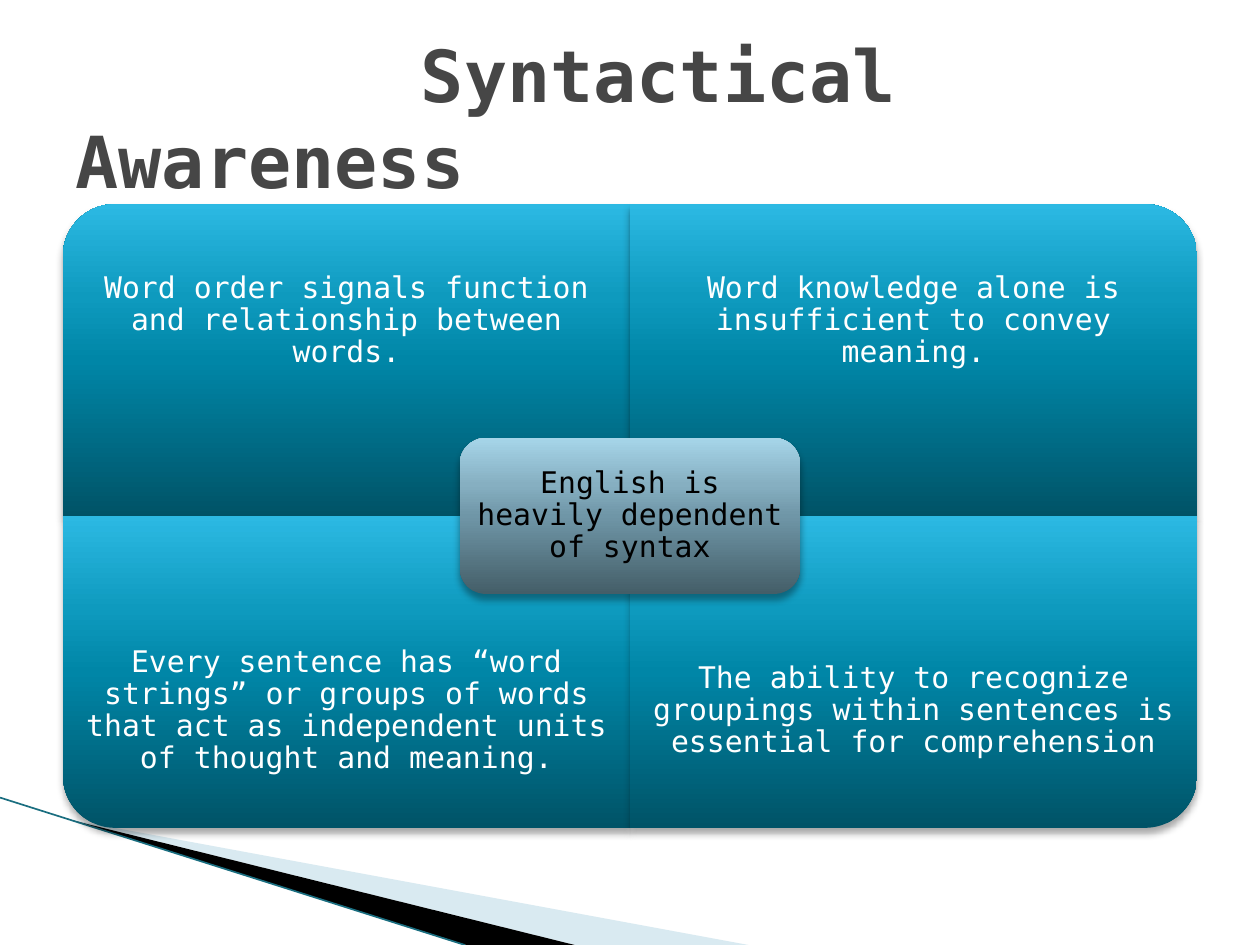
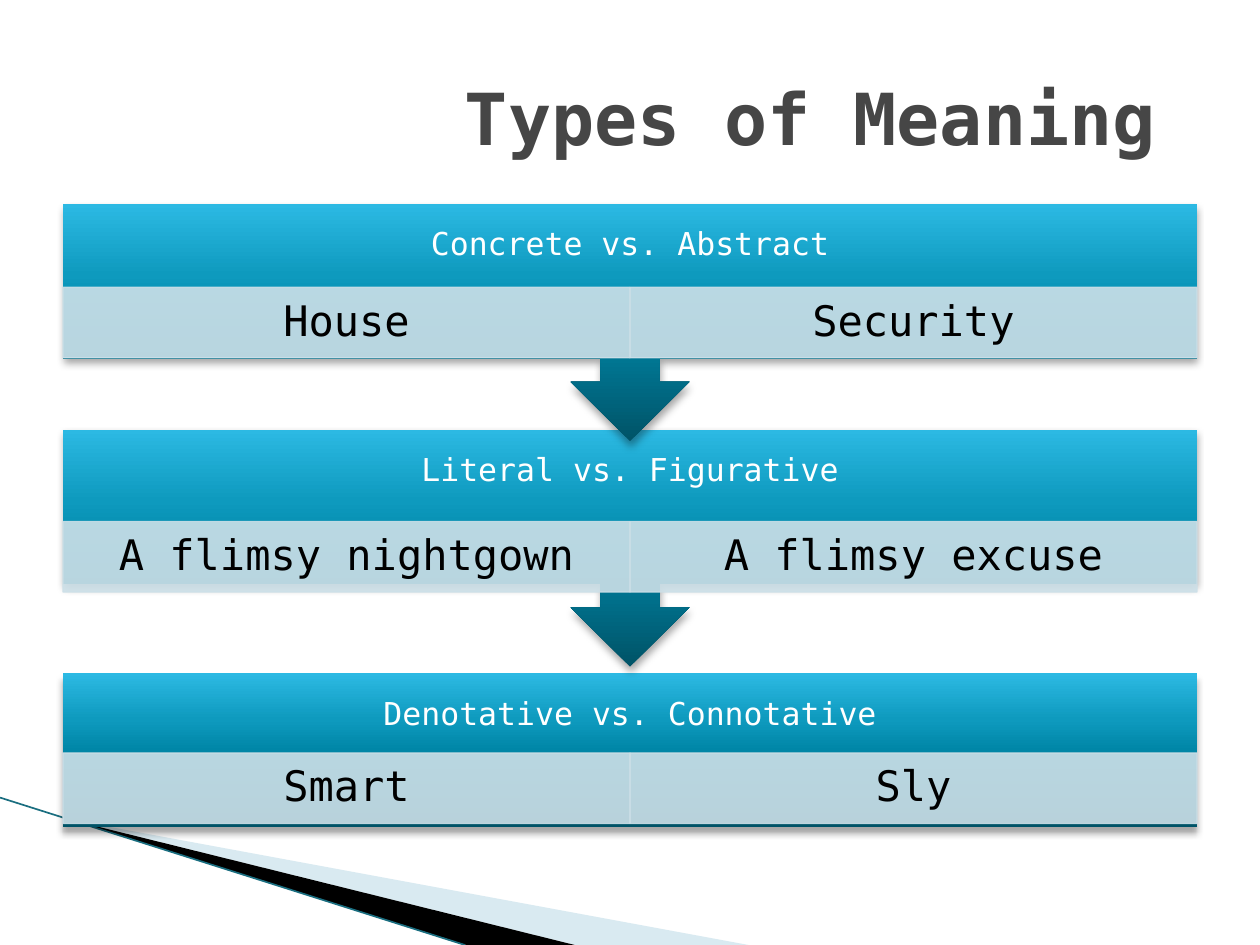
from dataclasses import dataclass

from lxml.etree import SubElement
from pptx import Presentation
from pptx.dml.color import RGBColor
from pptx.enum.shapes import MSO_CONNECTOR, MSO_SHAPE as Preset
from pptx.enum.text import MSO_ANCHOR as Anchor, PP_ALIGN as Align
from pptx.oxml.ns import qn
from pptx.util import Inches, Pt


@dataclass(frozen=True)
class Theme:
    font: str = "DejaVu Sans Mono"
    title_size: float = 41
    quadrant_size: float = 17
    heading_size: float = 18
    example_size: float = 24
    title: str = "464646"
    light: str = "FFFFFF"
    dark: str = "000000"
    swoosh: str = "A0CBDC"
    swoosh_line: str = "1A6E80"
    example: str = "CDE0E8"
    stops: tuple[int, ...] = (0, 50, 70, 100)
    teal: tuple[str, ...] = ("005367", "0086A7", "0E9ABE", "2CB9E3")
    slate: tuple[str, ...] = ("445E68", "6F96A7", "86AFC1", "A6D5E9")


@dataclass(frozen=True)
class Box:
    left: float
    top: float
    width: float
    height: float

    def emu(self) -> tuple[int, ...]:
        return tuple(Inches(v) for v in (self.left, self.top, self.width, self.height))

    def quarter_turned(self) -> "Box":
        """The box that covers this one after a turn of 90 degrees."""
        shift = (self.width - self.height) / 2
        return Box(self.left + shift, self.top - shift, self.height, self.width)


@dataclass(frozen=True)
class Quadrant:
    column: int
    row: int
    turn: int
    statement: str


@dataclass(frozen=True)
class Step:
    row: float
    example_offset: float
    heading: str
    examples: tuple[str, str]


THEME = Theme()

# Grid: two columns and two rows below the title
WIDTH, HEIGHT = 10, 7.5
LEFT, TOP = 0.05 * WIDTH, 0.216 * HEIGHT
COLUMN, ROW = 0.45 * WIDTH, 0.33 * HEIGHT
TITLE_BOX = Box(LEFT, 0.04 * HEIGHT, 2 * COLUMN, HEIGHT / 6)

QUADRANTS = [
    Quadrant(0, 0, 270, "Word order signals function and relationship between words."),
    Quadrant(1, 0, 0, "Word knowledge alone is insufficient to convey meaning."),
    Quadrant(0, 1, 180, "Every sentence has “word strings” or groups of words that act "
                        "as independent units of thought and meaning."),
    Quadrant(1, 1, 90, "The ability to recognize groupings within sentences is "
                       "essential for comprehension"),
]

STEPS = [
    Step(0, 0.267, "Concrete vs. Abstract", ("House", "Security")),
    Step(0.723, 0.295, "Literal vs. Figurative", ("A flimsy nightgown", "A flimsy excuse")),
    Step(1.505, 0.255, "Denotative vs. Connotative", ("Smart", "Sly")),
]


def grid_box(column: float, row: float, columns: float, rows: float) -> Box:
    return Box(LEFT + column * COLUMN, TOP + row * ROW, columns * COLUMN, rows * ROW)


def rgb(color: str) -> RGBColor:
    return RGBColor.from_string(color)


def set_opacity(shape, percent: int) -> None:
    for color in shape._element.spPr.iter(qn("a:srgbClr")):
        SubElement(color, qn("a:alpha"), val=str(percent * 1000))


def write(shape, text: str, size: float, color: str, inset_x: float, inset_y: float) -> None:
    frame = shape.text_frame
    frame.word_wrap = True
    frame.vertical_anchor = Anchor.MIDDLE
    frame.margin_left = frame.margin_right = Inches(inset_x)
    frame.margin_top = frame.margin_bottom = Inches(inset_y)
    frame.text = text
    paragraph = frame.paragraphs[0]
    paragraph.alignment = Align.CENTER
    paragraph.line_spacing = 0.9
    font = paragraph.runs[0].font
    font.name, font.size, font.color.rgb = THEME.font, Pt(size), rgb(color)


def add_label(slide, box: Box, text: str, size: float, inset: float) -> None:
    write(slide.shapes.add_textbox(*box.emu()), text, size, THEME.light, inset, inset)


def add_glossy(slide, preset: Preset, box: Box, colors: tuple[str, ...], turn: int = 0):
    """A shape with an upright gradient and a soft shadow."""
    shape = slide.shapes.add_shape(preset, *box.emu())
    shape.rotation = turn
    shape.line.fill.background()
    shape.fill.gradient()
    shape.fill.gradient_angle = 90
    properties = shape._element.spPr
    gradient = properties.find(qn("a:gradFill"))
    gradient.set("rotWithShape", "0")
    stops = gradient.find(qn("a:gsLst"))
    for stop in list(stops):
        stops.remove(stop)
    for position, color in zip(THEME.stops, colors):
        stop = SubElement(stops, qn("a:gs"), pos=str(position * 1000))
        SubElement(stop, qn("a:srgbClr"), val=color)

    shape.shadow.inherit = False
    shadow = SubElement(properties.find(qn("a:effectLst")), qn("a:outerShdw"),
                        blurRad=str(Pt(4)), dist=str(Pt(3)), dir="5400000",
                        rotWithShape="0")
    color = SubElement(shadow, qn("a:srgbClr"), val=THEME.dark)
    SubElement(color, qn("a:alpha"), val="35000")
    return shape


def add_wedge(slide, color: str, points: list[tuple[float, float]]):
    corners = [(Inches(x * WIDTH), Inches(y * HEIGHT)) for x, y in points]
    builder = slide.shapes.build_freeform(*corners[0])
    builder.add_line_segments(corners[1:])
    wedge = builder.convert_to_shape()
    wedge.fill.solid()
    wedge.fill.fore_color.rgb = rgb(color)
    wedge.line.fill.background()
    wedge.shadow.inherit = False
    return wedge


def add_swoosh(slide) -> None:
    tip = (0.054, 0.867)
    pale = add_wedge(slide, THEME.swoosh, [tip, (0.594, 1), (0.456, 1)])
    set_opacity(pale, 40)
    add_wedge(slide, THEME.dark, [tip, (0.456, 1), (0.37, 1)])
    edge = slide.shapes.add_connector(MSO_CONNECTOR.STRAIGHT, 0, Inches(0.844 * HEIGHT),
                                      Inches(0.369 * WIDTH), Inches(HEIGHT))
    edge.line.color.rgb = rgb(THEME.swoosh_line)
    edge.line.width = Pt(0.95)
    SubElement(edge._element.spPr, qn("a:effectLst"))


def add_titled_slide(deck, title: str, indent: float):
    slide = deck.slides.add_slide(deck.slide_layouts.get_by_name("Title Only"))
    add_swoosh(slide)
    heading = slide.shapes.title
    heading.left, heading.top, heading.width, heading.height = TITLE_BOX.emu()
    frame = heading.text_frame
    frame.word_wrap = True
    frame.vertical_anchor = Anchor.MIDDLE
    frame.text = title
    paragraph = frame.paragraphs[0]
    paragraph.alignment = Align.LEFT
    properties = paragraph._p.get_or_add_pPr()
    properties.set("marL", "0")
    properties.set("indent", str(Inches(indent * WIDTH)))
    font = paragraph.runs[0].font
    font.name, font.size, font.bold = THEME.font, Pt(THEME.title_size), True
    font.color.rgb = rgb(THEME.title)
    return slide


def add_quadrant(slide, quadrant: Quadrant) -> None:
    box = grid_box(quadrant.column, quadrant.row, 1, 1)
    turned = box.quarter_turned() if quadrant.turn % 180 else box
    add_glossy(slide, Preset.ROUND_1_RECTANGLE, turned, THEME.teal, quadrant.turn)
    statement_box = grid_box(quadrant.column, quadrant.row * 1.25, 1, 0.75)
    add_label(slide, statement_box, quadrant.statement, THEME.quadrant_size, 0.13)


def add_step(slide, step: Step, is_last: bool) -> None:
    if is_last:
        add_glossy(slide, Preset.RECTANGLE, grid_box(0, step.row, 2, 0.493), THEME.teal)
    else:
        add_glossy(slide, Preset.UP_ARROW_CALLOUT, grid_box(0, step.row, 2, 0.76),
                   THEME.teal, 180)
    add_label(slide, grid_box(0, step.row, 2, 0.267), step.heading, THEME.heading_size, 0.14)
    for column, example in enumerate(step.examples):
        box = grid_box(column, step.row + step.example_offset, 1, 0.226)
        cell = slide.shapes.add_shape(Preset.RECTANGLE, *box.emu())
        cell.fill.solid()
        cell.fill.fore_color.rgb = cell.line.color.rgb = rgb(THEME.example)
        cell.line.width = Pt(0.75)
        cell.shadow.inherit = False
        set_opacity(cell, 90)
        write(cell, example, THEME.example_size, THEME.dark, 0.19, 0.03)


def main() -> None:
    deck = Presentation()
    deck.slide_width, deck.slide_height = Inches(WIDTH), Inches(HEIGHT)

    # Four statements around the central claim
    syntax = add_titled_slide(deck, "Syntactical Awareness", 0.274)
    for quadrant in QUADRANTS:
        add_quadrant(syntax, quadrant)
    claim = add_glossy(syntax, Preset.ROUNDED_RECTANGLE, grid_box(0.7, 0.75, 0.6, 0.5),
                       THEME.slate)
    write(claim, "English is heavily dependent of syntax", THEME.quadrant_size,
          THEME.dark, 0.06, 0.06)

    # Three contrasts, laid from the bottom up so that each arrow lies on top
    meaning = add_titled_slide(deck, "Types of Meaning", 0.309)
    for step in reversed(STEPS):
        add_step(meaning, step, is_last=step is STEPS[-1])

    deck.save("out.pptx")


if __name__ == "__main__":
    main()
